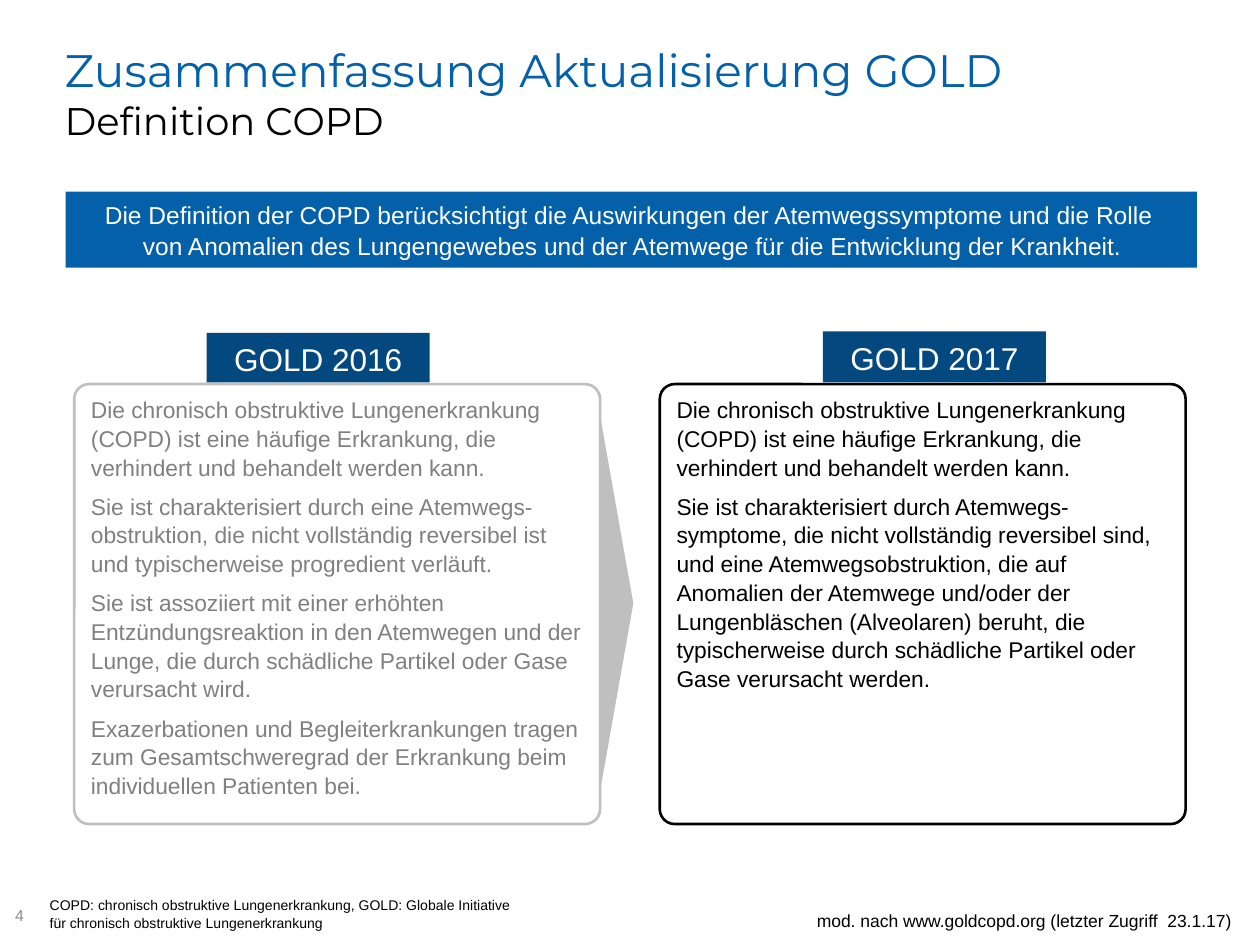
from dataclasses import dataclass

from pptx import Presentation
from pptx.dml.color import RGBColor
from pptx.enum.shapes import MSO_SHAPE
from pptx.enum.text import MSO_ANCHOR, PP_ALIGN
from pptx.util import Pt


@dataclass(frozen=True)
class Theme:
    blue: str = "0460A9"
    navy: str = "03487F"
    black: str = "000000"
    white: str = "FFFFFF"
    silver: str = "BFBFBF"
    grey: str = "808080"
    page_grey: str = "8C8C8C"
    body_font: str = "Arial"
    title_font: str = "Montserrat"
    title: float = 26
    subtitle: float = 22
    tag: float = 18
    banner: float = 14
    body: float = 13
    source: float = 10
    page: float = 9
    note: float = 8


T = Theme()
INSETS = (7.2, 3.6, 7.2, 3.6)


def style_run(r, size, color, font=T.body_font):
    r.font.size = Pt(size)
    r.font.name = font
    r.font.color.rgb = RGBColor.from_string(color)


def write(sp, paragraphs, size, color, align=PP_ALIGN.LEFT,
          anchor=MSO_ANCHOR.TOP, insets=INSETS, spacing=1.05, after=0):
    tf = sp.text_frame
    tf.word_wrap = True
    tf.vertical_anchor = anchor
    tf.margin_left, tf.margin_top, tf.margin_right, tf.margin_bottom = map(Pt, insets)
    for i, text in enumerate(paragraphs):
        p = tf.add_paragraph() if i else tf.paragraphs[0]
        p.text = text
        p.alignment = align
        p.line_spacing = spacing
        p.space_after = Pt(after)
        for r in p.runs:
            style_run(r, size, color)
    return tf


def add_text(s, box, text, size, color, **layout):
    sp = s.shapes.add_textbox(*map(Pt, box))
    return write(sp, [text], size, color, **layout)


def add_block(s, kind, box, fill, line=None):
    sp = s.shapes.add_shape(kind, *map(Pt, box))
    sp.shadow.inherit = False
    sp.fill.solid()
    sp.fill.fore_color.rgb = RGBColor.from_string(fill)
    if line:
        sp.line.color.rgb = RGBColor.from_string(line)
        sp.line.width = Pt(1.5)
    else:
        sp.line.fill.background()
    return sp


def add_title(s, box, title, subtitle):
    tf = add_text(s, box, f"{title}\n{subtitle}", T.title, T.blue,
                  anchor=MSO_ANCHOR.MIDDLE, insets=(0, 0, 0, 0), spacing=1.0)
    head, sub = tf.paragraphs[0].runs
    style_run(head, T.title, T.blue, T.title_font)
    style_run(sub, T.subtitle, T.black, T.title_font)


def add_banner(s, box, text):
    sp = add_block(s, MSO_SHAPE.RECTANGLE, box, T.blue)
    write(sp, [text], T.banner, T.white, align=PP_ALIGN.CENTER,
          anchor=MSO_ANCHOR.MIDDLE, insets=(8.6, 3.6, 7.2, 3.6))


def add_panel(s, box, tag, tag_left, tag_height, paragraphs, color, line):
    """Outlined text panel with a name tag standing on its top edge."""
    left, top, _, _ = box
    sp = add_block(s, MSO_SHAPE.ROUNDED_RECTANGLE, box, T.white, line)
    sp.adjustments[0] = 0.034
    write(sp, paragraphs, T.body, color, after=6)

    tag_box = (left + tag_left, top - 0.9 - tag_height, 127.5, tag_height)
    sp = add_block(s, MSO_SHAPE.RECTANGLE, tag_box, T.navy)
    write(sp, [tag], T.tag, T.white, align=PP_ALIGN.CENTER,
          anchor=MSO_ANCHOR.MIDDLE)


def add_pointer(s, box):
    """Flat triangle pointing right that fills the upright box."""
    left, top, width, height = box
    shift = (height - width) / 2
    turned = (left - shift, top + shift, height, width)
    sp = add_block(s, MSO_SHAPE.FLOWCHART_EXTRACT, turned, T.silver)
    sp.rotation = 90


def add_footer(s, box, page, note, source):
    left, top, width, _ = box
    add_text(s, (left, top, 22.3, 28.8), page, T.page, T.page_grey,
             anchor=MSO_ANCHOR.MIDDLE, insets=(8.6, 3.6, 3.6, 3.6))
    add_text(s, (left + 21.3, top, 288.7, 26.6), note, T.note, T.black)
    add_text(s, (left + width - 260, top + 7, 260, 21), source, T.source,
             T.black, align=PP_ALIGN.RIGHT, spacing=1.1)


def main():
    prs = Presentation()
    prs.slide_width, prs.slide_height = Pt(720), Pt(540)
    s = prs.slides.add_slide(prs.slide_layouts[6])

    # Heading
    add_title(s, (37, 15, 646.5, 75.6),
              "Zusammenfassung Aktualisierung GOLD", "Definition COPD")
    add_banner(s, (37.5, 109.5, 646.5, 43.5),
               "Die Definition der COPD berücksichtigt die Auswirkungen der "
               "Atemwegssymptome und die Rolle \nvon Anomalien des Lungengewebes "
               "und der Atemwege für die Entwicklung der Krankheit.")

    # Comparison of the two definitions
    shared = ("Die chronisch obstruktive Lungenerkrankung (COPD) ist eine häufige "
              "Erkrankung, die verhindert und behandelt werden kann.")
    left, top, width, height, pitch = 42.4, 219.5, 300.5, 251.4, 334.6
    add_panel(s, (left, top, width, height), "GOLD 2016", 75.7, 28.3, [
        shared,
        "Sie ist charakterisiert durch eine Atemwegs-obstruktion, die nicht "
        "vollständig reversibel ist und typischerweise progredient verläuft.",
        "Sie ist assoziiert mit einer erhöhten Entzündungsreaktion in den "
        "Atemwegen und der Lunge, die durch schädliche Partikel oder Gase "
        "verursacht wird.",
        "Exazerbationen und Begleiterkrankungen tragen zum Gesamtschweregrad "
        "der Erkrankung beim individuellen Patienten bei.",
    ], T.grey, T.silver)
    add_panel(s, (left + pitch, top, width, height), "GOLD 2017", 93.2, 29.2, [
        shared,
        "Sie ist charakterisiert durch Atemwegs-symptome, die nicht vollständig "
        "reversibel sind, und eine Atemwegsobstruktion, die auf Anomalien der "
        "Atemwege und/oder der Lungenbläschen (Alveolaren) beruht, die "
        "typischerweise durch schädliche Partikel oder Gase verursacht werden.",
    ], T.black, T.black)
    add_pointer(s, (left + width, top + 18, 19, 214.6))

    # Footer
    add_footer(s, (0, 508.3, 710.6, 28.8), "4",
               "COPD: chronisch obstruktive Lungenerkrankung, GOLD: Globale "
               "Initiative für chronisch obstruktive Lungenerkrankung",
               "mod. nach www.goldcopd.org (letzter Zugriff  23.1.17)")

    prs.save("out.pptx")


if __name__ == "__main__":
    main()
